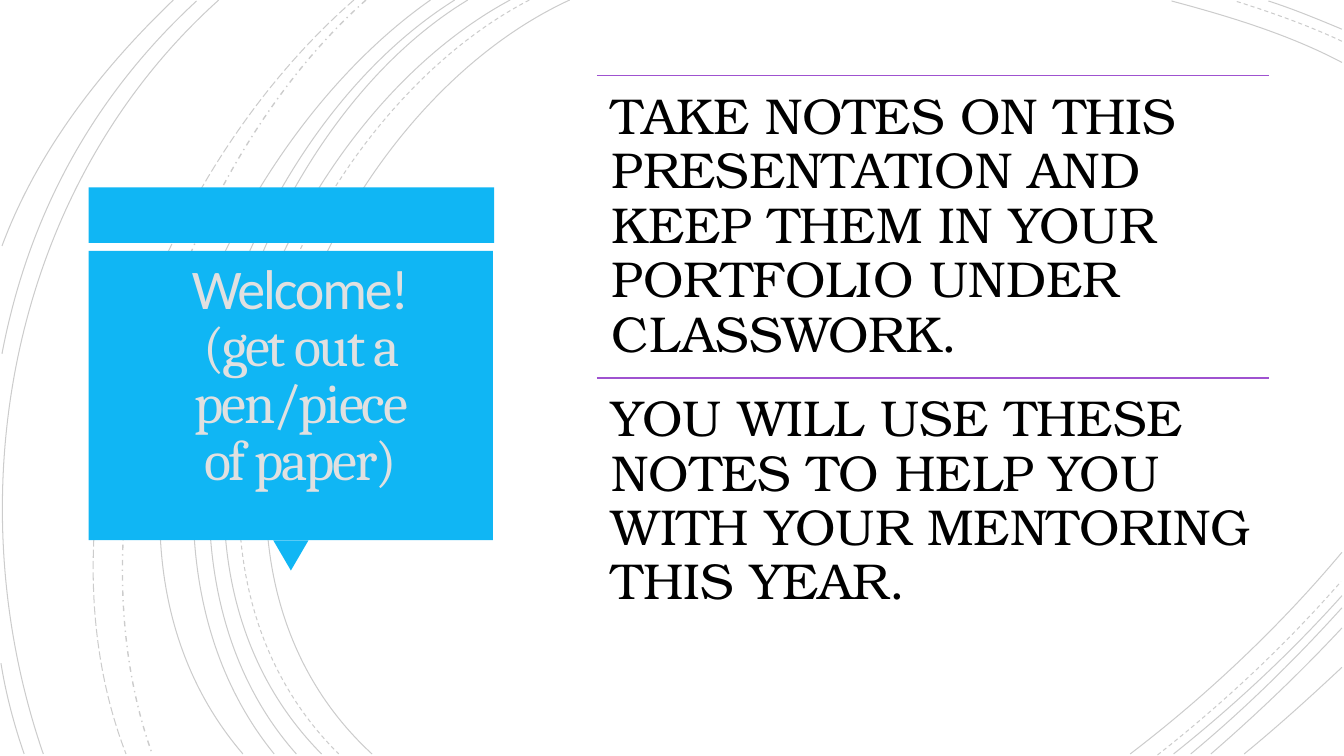
from dataclasses import dataclass

from pptx import Presentation
from pptx.dml.color import RGBColor
from pptx.enum.dml import MSO_LINE
from pptx.enum.shapes import MSO_CONNECTOR, MSO_SHAPE
from pptx.enum.text import MSO_ANCHOR, MSO_AUTO_SIZE, PP_ALIGN
from pptx.oxml.ns import qn
from pptx.util import Inches, Pt
from lxml.etree import SubElement

RECT, WEDGE = MSO_SHAPE.RECTANGLE, MSO_SHAPE.ISOSCELES_TRIANGLE
STRAIGHT = MSO_CONNECTOR.STRAIGHT
SOLID, DASH = MSO_LINE.SOLID, MSO_LINE.DASH
DOTTED, LONG = MSO_LINE.DASH_DOT, MSO_LINE.LONG_DASH
LEFT, CENTER = PP_ALIGN.LEFT, PP_ALIGN.CENTER
TOP, MIDDLE = MSO_ANCHOR.TOP, MSO_ANCHOR.MIDDLE


@dataclass(frozen=True)
class Theme:
    blue: str = "10B6F4"
    pale: str = "E0E0E0"
    violet: str = "9F52D0"
    black: str = "000000"
    head: int = 40
    body: int = 36
    rule: float = 1.25
    arc: float = 0.75
    dots: float = 1
    alpha: int = 20000


THEME = Theme()

# Start, two control points and end of each arc, in inches
ARCS = {
    SOLID: [
        (5.65, 0, 3.15, 1.15, 1.43, 5.4, 3.69, 7.48),
        (13.31, 0.62, 12.78, 0.34, 12.18, 0.16, 11.62, 0.01),
        (11.21, 7.48, 11.97, 6.9, 12.69, 6.22, 13.31, 5.48),
        (5.06, 0, 2.7, 1.27, 1.1, 5.37, 3.19, 7.48),
        (13.31, 0.29, 13.07, 0.19, 12.83, 0.09, 12.58, 0.01),
        (11.64, 7.48, 12.23, 7.01, 12.8, 6.48, 13.31, 5.91),
        (4.64, 0, 2.44, 1.33, 1.1, 5.41, 2.94, 7.48),
        (11.81, 7.48, 12.34, 7.04, 12.84, 6.55, 13.31, 6.03),
        (4.51, 0, 2.31, 1.38, 0.97, 5.33, 2.72, 7.48),
        (12.01, 7.48, 12.46, 7.09, 12.9, 6.67, 13.31, 6.23),
        (4.27, 0, 2.17, 1.47, 0.53, 5.29, 2.41, 7.48),
        (12.34, 7.48, 12.67, 7.21, 12.99, 6.92, 13.31, 6.62),
        (2.17, 0, 0.11, 1.85, -0.46, 4.9, 0.43, 7.48),
        (1.95, 0.01, 0.92, 0.96, 0.28, 2.14, 0.02, 3.51),
        (0.01, 6.58, 0.06, 6.89, 0.14, 7.19, 0.24, 7.48),
        (1.72, 0, 1, 0.69, 0.37, 1.5, 0.02, 2.44),
    ],
    DASH: [
        (5.25, 0, 2.85, 1.25, 1.23, 5.37, 3.36, 7.48),
        (13.31, 0.41, 12.97, 0.25, 12.6, 0.12, 12.25, 0.01),
        (11.48, 7.49, 12.13, 6.98, 12.75, 6.4, 13.3, 5.77),
    ],
    DOTTED: [(3.63, 0, 1.76, 1.66, 0.65, 5.09, 1.51, 7.48)],
    LONG: [(3.51, 0, 1.57, 1.69, 0.29, 4.99, 1.25, 7.48)],
}

NOTES = [
    "TAKE NOTES ON THIS PRESENTATION AND KEEP THEM IN YOUR PORTFOLIO UNDER CLASSWORK.",
    "YOU WILL USE THESE NOTES TO HELP YOU WITH YOUR MENTORING THIS YEAR.",
]


def rgb(code):
    return RGBColor.from_string(code)


def add_arc(slide, nums, dash):
    spots = [Inches(n) for n in nums]
    start, *rest = zip(spots[::2], spots[1::2])
    pen = slide.shapes.build_freeform(*start)
    pen.add_line_segments(rest, close=False)
    arc = pen.convert_to_shape()
    arc.shadow.inherit = False
    arc.fill.background()
    arc.line.color.rgb = rgb(THEME.black)
    arc.line.width = Pt(THEME.dots if dash == DOTTED else THEME.arc)
    arc.line.dash_style = dash
    tint = arc.line._ln.find(".//" + qn("a:srgbClr"))
    SubElement(tint, qn("a:alpha"), val=str(THEME.alpha))
    # Turn the three straight steps into one Bezier curve
    track = arc._element.find(".//" + qn("a:path"))
    curve = SubElement(track, qn("a:cubicBezTo"))
    for step in track.findall(qn("a:lnTo")):
        curve.append(step[0])
        track.remove(step)


def add_block(slide, kind, box, turn=0):
    block = slide.shapes.add_shape(kind, *map(Inches, box))
    block.shadow.inherit = False
    block.fill.solid()
    block.fill.fore_color.rgb = rgb(THEME.blue)
    block.line.fill.background()
    block.rotation = turn


def add_rule(slide, left, top, width):
    ends = (left, top, left + width, top)
    rule = slide.shapes.add_connector(STRAIGHT, *map(Inches, ends))
    rule.line.color.rgb = rgb(THEME.violet)
    rule.line.width = Pt(THEME.rule)
    SubElement(rule._element.spPr, qn("a:effectLst"))


def put_text(shape, runs, box, *, size, color, inset, space,
             align=LEFT, anchor=TOP, track=0):
    """Place a shape and fill it with (text, font) runs, one per line."""
    shape.left, shape.top, shape.width, shape.height = map(Inches, box)
    frame = shape.text_frame
    frame.word_wrap = True
    frame.auto_size = MSO_AUTO_SIZE.NONE
    frame.vertical_anchor = anchor
    frame.margin_left = frame.margin_right = Inches(inset)
    frame.margin_top = frame.margin_bottom = Inches(inset)
    para = frame.paragraphs[0]
    para.alignment, para.line_spacing = align, space
    for i, (text, face) in enumerate(runs):
        if i:
            para.add_line_break()
        run = para.add_run()
        run.text = text
        run.font.name, run.font.size = face, Pt(size)
        run.font.color.rgb = rgb(color)
        if track:
            run.font._element.set("spc", str(round(track * 100)))


def main():
    deck = Presentation()
    deck.slide_width, deck.slide_height = Inches(13.33), Inches(7.5)
    slide = deck.slides.add_slide(deck.slide_layouts[5])
    title = slide.shapes.title

    # Background arcs
    for dash, group in ARCS.items():
        for nums in group:
            add_arc(slide, nums, dash)

    # Blue callout
    add_block(slide, RECT, (0.88, 1.86, 4.02, 0.55))
    add_block(slide, WEDGE, (2.71, 5.36, 0.35, 0.3), turn=180)
    add_block(slide, RECT, (0.88, 2.49, 4.01, 2.87))

    # Title, raised above the callout
    slide.shapes._spTree.append(title._element)
    put_text(title, [("Welcome!", "Calibri"),
                     ("(get out a pen/piece of paper)", "Cambria")],
             (1.5, 1.5, 2.96, 4.5), size=THEME.head, color=THEME.pale,
             inset=0.25, space=0.85, align=CENTER, anchor=MIDDLE, track=-1.5)

    # Ruled notes
    left, top, width, height = 5.92, 0.75, 6.67, 3
    for i, note in enumerate(NOTES):
        box = (left, top + i * height, width, height)
        add_rule(slide, *box[:3])
        label = slide.shapes.add_textbox(0, 0, 0, 0)
        put_text(label, [(note, "TeX Gyre Bonum")], box, size=THEME.body,
                 color=THEME.black, inset=0.15, space=0.9)

    deck.save("out.pptx")


if __name__ == "__main__":
    main()
